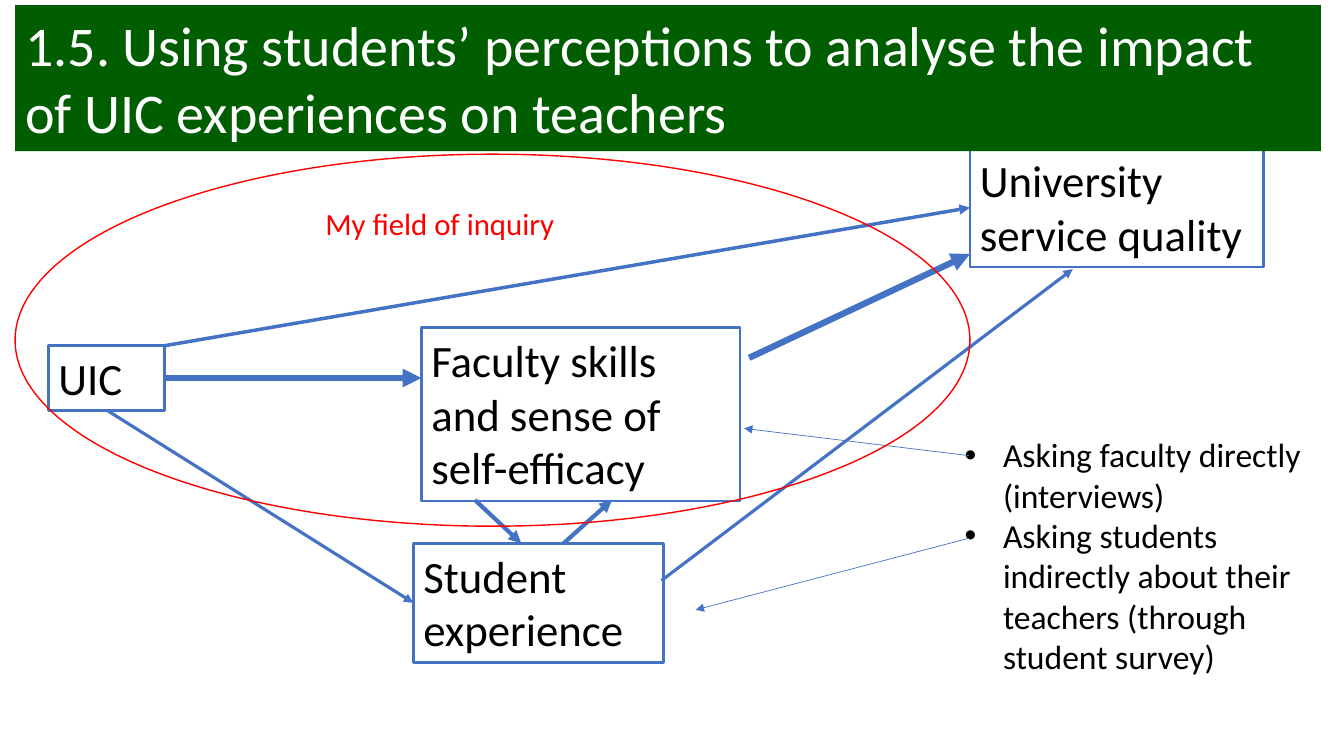
from dataclasses import dataclass

from lxml.etree import SubElement
from pptx import Presentation
from pptx.dml.color import RGBColor
from pptx.enum.shapes import MSO_CONNECTOR, MSO_SHAPE
from pptx.enum.text import MSO_ANCHOR, MSO_AUTO_SIZE, PP_ALIGN
from pptx.oxml.ns import qn
from pptx.util import Inches, Pt


@dataclass(frozen=True)
class Theme:
    font: str = "Calibri"
    blue: str = "4472C4"
    red: str = "FF0000"
    green: str = "005E00"
    black: str = "000000"
    white: str = "FFFFFF"
    title: int = 40
    box: int = 32
    bullet: int = 24
    label: int = 22


class Board:
    def __init__(self, deck, theme):
        self.theme = theme
        self.slide = deck.slides.add_slide(deck.slide_layouts[5])
        self.shapes = self.slide.shapes

    def letter(self, shape, lines, size, color, fit=MSO_AUTO_SIZE.SHAPE_TO_FIT_TEXT):
        frame = shape.text_frame
        frame.text = "\n".join(lines)
        frame.word_wrap = True
        frame.auto_size = fit
        frame.vertical_anchor = MSO_ANCHOR.TOP
        frame.margin_left = frame.margin_right = Inches(0.1)
        frame.margin_top = frame.margin_bottom = Inches(0.05)
        for para in frame.paragraphs:
            para.alignment = PP_ALIGN.LEFT
            para.line_spacing = 1.0
            for run in para.runs:
                run.font.name = self.theme.font
                run.font.size = Pt(size)
                run.font.color.rgb = RGBColor.from_string(color)

    def title(self, text, area):
        head = self.shapes.title
        head.left, head.top, head.width, head.height = map(Inches, area)
        head.fill.solid()
        head.fill.fore_color.rgb = RGBColor.from_string(self.theme.green)
        self.letter(head, [text], self.theme.title, self.theme.white, MSO_AUTO_SIZE.NONE)
        # Bring the banner in front of what is drawn so far
        head.element.getparent().append(head.element)

    def outline(self, kind, area, color, width):
        shape = self.shapes.add_shape(kind, *map(Inches, area))
        shape.shadow.inherit = False
        shape.fill.background()
        shape.line.color.rgb = RGBColor.from_string(color)
        shape.line.width = Pt(width)
        return shape

    def box(self, text, area):
        shape = self.outline(MSO_SHAPE.RECTANGLE, area, self.theme.blue, 2)
        self.letter(shape, [text], self.theme.box, self.theme.black)

    def oval(self, area):
        self.outline(MSO_SHAPE.OVAL, area, self.theme.red, 1)

    def label(self, text, area):
        shape = self.shapes.add_textbox(*map(Inches, area))
        self.letter(shape, [text], self.theme.label, self.theme.red)

    def bullets(self, lines, area):
        shape = self.shapes.add_textbox(*map(Inches, area))
        self.letter(shape, lines, self.theme.bullet, self.theme.black)
        for para in shape.text_frame.paragraphs:
            props = para._p.get_or_add_pPr()
            props.set("marL", str(Inches(0.38)))
            props.set("indent", str(Inches(-0.38)))
            SubElement(props, qn("a:buFont"), typeface="Arial")
            SubElement(props, qn("a:buChar"), char="•")

    def arrow(self, start, end, width):
        link = self.shapes.add_connector(
            MSO_CONNECTOR.STRAIGHT, *map(Inches, start + end))
        link.line.color.rgb = RGBColor.from_string(self.theme.blue)
        link.line.width = Pt(width)
        props = link.element.spPr
        SubElement(props.find(qn("a:ln")), qn("a:tailEnd"), type="triangle")
        SubElement(props, qn("a:effectLst"))


def main():
    deck = Presentation()
    deck.slide_width, deck.slide_height = Inches(13.33), Inches(7.5)
    board = Board(deck, Theme())

    # Concepts
    board.box("UIC", (0.48, 3.43, 1.15, 0.64))
    board.box("Faculty skills and sense of self-efficacy", (4.18, 3.25, 3.16, 1.72))
    board.box("University service quality", (9.62, 1.47, 2.91, 1.18))
    board.box("Student experience", (4.1, 5.39, 2.48, 1.18))

    # Effects between concepts
    for start, end, width in (
        ((1.63, 3.43), (9.62, 2.06), 2.5),
        ((1.63, 3.75), (4.18, 3.75), 4.5),
        ((7.43, 3.55), (9.62, 2.52), 4.5),
        ((1.06, 4.07), (4.1, 5.98), 2.25),
        ((6.56, 5.76), (10.64, 2.67), 2.25),
        ((4.71, 4.96), (5.17, 5.39), 3),
        ((5.59, 5.39), (6.07, 4.96), 3),
    ):
        board.arrow(start, end, width)

    # Ways of asking
    board.bullets([
        "Asking faculty directly (interviews)",
        "Asking students indirectly about their teachers (through student survey)",
    ], (9.47, 4.26, 3.86, 2.52))
    board.arrow((9.61, 4.52), (7.38, 4.25), 0.5)
    board.arrow((9.61, 5.34), (6.9, 6.05), 0.5)

    # Field of inquiry
    board.oval((0.15, 1.53, 9.47, 3.69))
    board.label("My field of inquiry", (3.13, 1.98, 2.94, 0.47))

    # Title banner
    board.title("1.5. Using students’ perceptions to analyse the impact "
                "of UIC experiences on teachers", (0.15, 0.05, 12.95, 1.45))

    deck.save("out.pptx")


if __name__ == "__main__":
    main()
